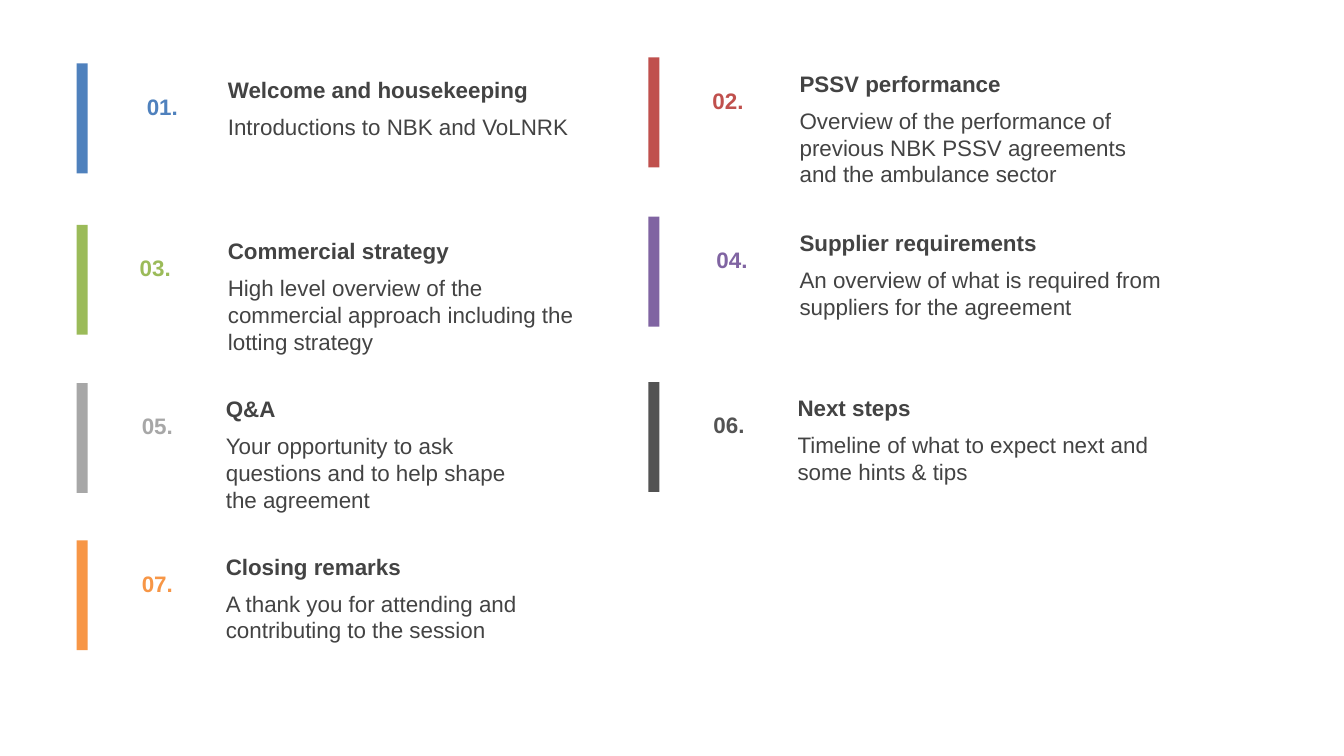
from pptx import Presentation
from pptx import util as u
from pptx.dml.color import RGBColor
from pptx.enum import shapes, text

PX = 9144  # EMU in one px, 100 px to the inch

BLUE = RGBColor(0x4F, 0x81, 0xBD)
RED = RGBColor(0xC0, 0x50, 0x4D)
GREEN = RGBColor(0x9B, 0xBB, 0x59)
PURPLE = RGBColor(0x80, 0x64, 0xA2)
SILVER = RGBColor(0xA7, 0xA7, 0xA7)
SLATE = RGBColor(0x53, 0x53, 0x53)
ORANGE = RGBColor(0xF7, 0x96, 0x46)
INK = RGBColor(0x43, 0x43, 0x43)

LEFT, RIGHT = 76, 643
LINE, STEP = 31, 27  # height of one line of text, and of each further line

# bar left, bar top, colour, number left, text left, body width, body lines, title, body
ITEMS = [
    (LEFT, 63, BLUE, 122, 222, 395, 1, "Welcome and housekeeping",
     "Introductions to NBK and VoLNRK"),
    (RIGHT, 57, RED, 683, 789, 372, 3, "PSSV performance",
     "Overview of the performance of previous NBK PSSV agreements "
     "and the ambulance sector"),
    (LEFT, 223, GREEN, 115, 222, 372, 3, "Commercial strategy",
     "High level overview of the commercial approach including the "
     "lotting strategy"),
    (RIGHT, 215, PURPLE, 687, 789, 372, 2, "Supplier requirements",
     "An overview of what is required from suppliers for the agreement"),
    (LEFT, 380, SILVER, 117, 220, 297, 3, "Q&A",
     "Your opportunity to ask questions and to help shape the agreement"),
    (RIGHT, 379, SLATE, 684, 787, 405, 2, "Next steps",
     "Timeline of what to expect next and some hints & tips"),
    (LEFT, 536, ORANGE, 117, 220, 297, 3, "Closing remarks",
     "A thank you for attending and contributing to the session"),
]


def scale(*box):
    return [px * PX for px in box]


def add_bar(slide, left, top, color):
    bar = slide.shapes.add_shape(shapes.MSO_SHAPE.RECTANGLE,
                                 *scale(left, top, 11, 109))
    bar.shadow.inherit = False
    bar.fill.solid()
    bar.fill.fore_color.rgb = color
    bar.line.fill.background()


def add_label(slide, words, box, color=INK, bold=False,
              anchor=text.MSO_ANCHOR.TOP, align=text.PP_ALIGN.LEFT):
    frame = slide.shapes.add_textbox(*scale(*box)).text_frame
    layout = {
        "word_wrap": True,
        "auto_size": text.MSO_AUTO_SIZE.SHAPE_TO_FIT_TEXT,
        "vertical_anchor": anchor,
        "margin_left": 4 * PX, "margin_right": 4 * PX,
        "margin_top": 2 * PX, "margin_bottom": 2 * PX,
    }
    for key, value in layout.items():
        setattr(frame, key, value)
    para = frame.paragraphs[0]
    para.alignment = align
    run = para.add_run()
    run.text = words
    for key, value in {"name": "Arial", "size": u.Pt(16), "bold": bold}.items():
        setattr(run.font, key, value)
    run.font.color.rgb = color


def add_item(slide, num, item):
    """Draw one agenda entry: bar, number, title and body."""
    left, top, color, num_x, text_x, width, lines, title, body = item
    add_bar(slide, left, top, color)
    add_label(slide, f"{num:02}.", (num_x, top + 27, 78, LINE), color, True,
              text.MSO_ANCHOR.MIDDLE, text.PP_ALIGN.CENTER)
    add_label(slide, title, (text_x, top + 10, 400, LINE), bold=True,
              anchor=text.MSO_ANCHOR.BOTTOM)
    add_label(slide, body,
              (text_x, top + 47, width, LINE + STEP * (lines - 1)))


def main():
    deck = Presentation()
    deck.slide_width, deck.slide_height = scale(1333, 750)
    slide = deck.slides.add_slide(deck.slide_layouts.get_by_name("Blank"))
    for num, item in enumerate(ITEMS, 1):
        add_item(slide, num, item)
    deck.save("out.pptx")


if __name__ == "__main__":
    main()
